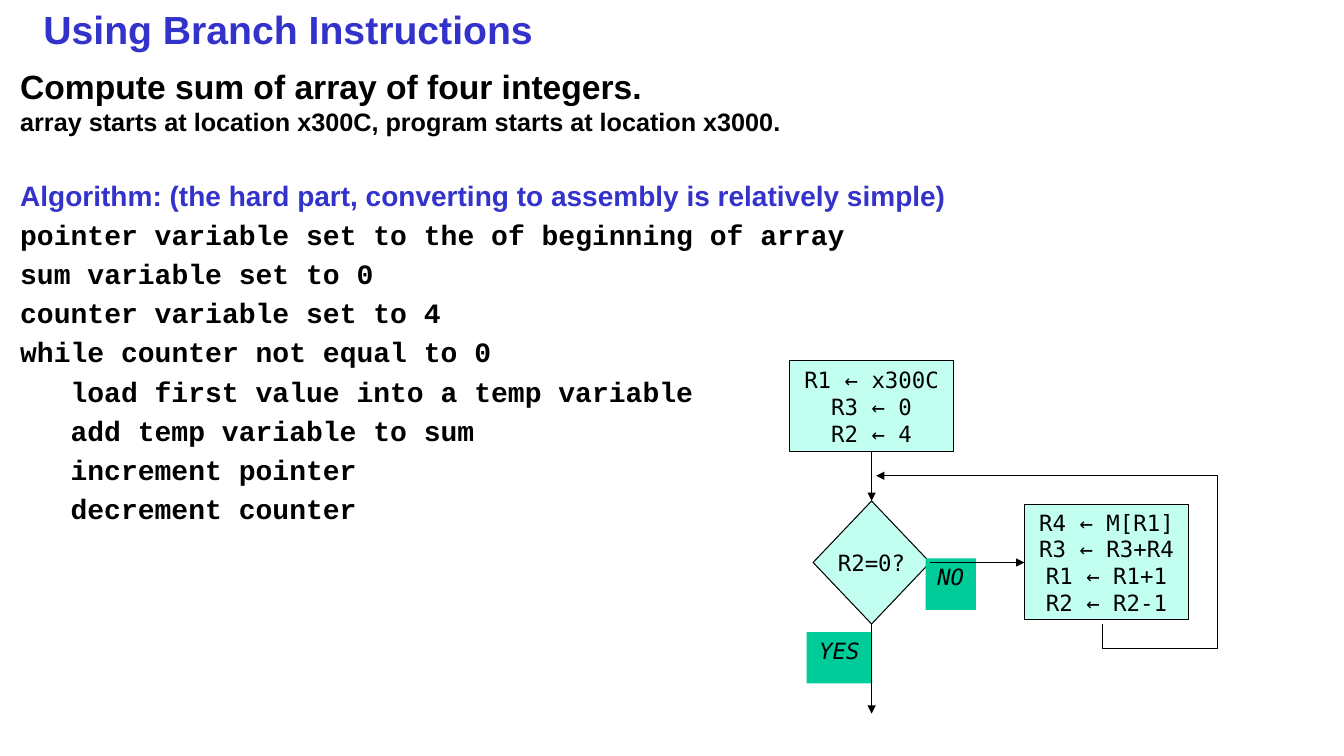
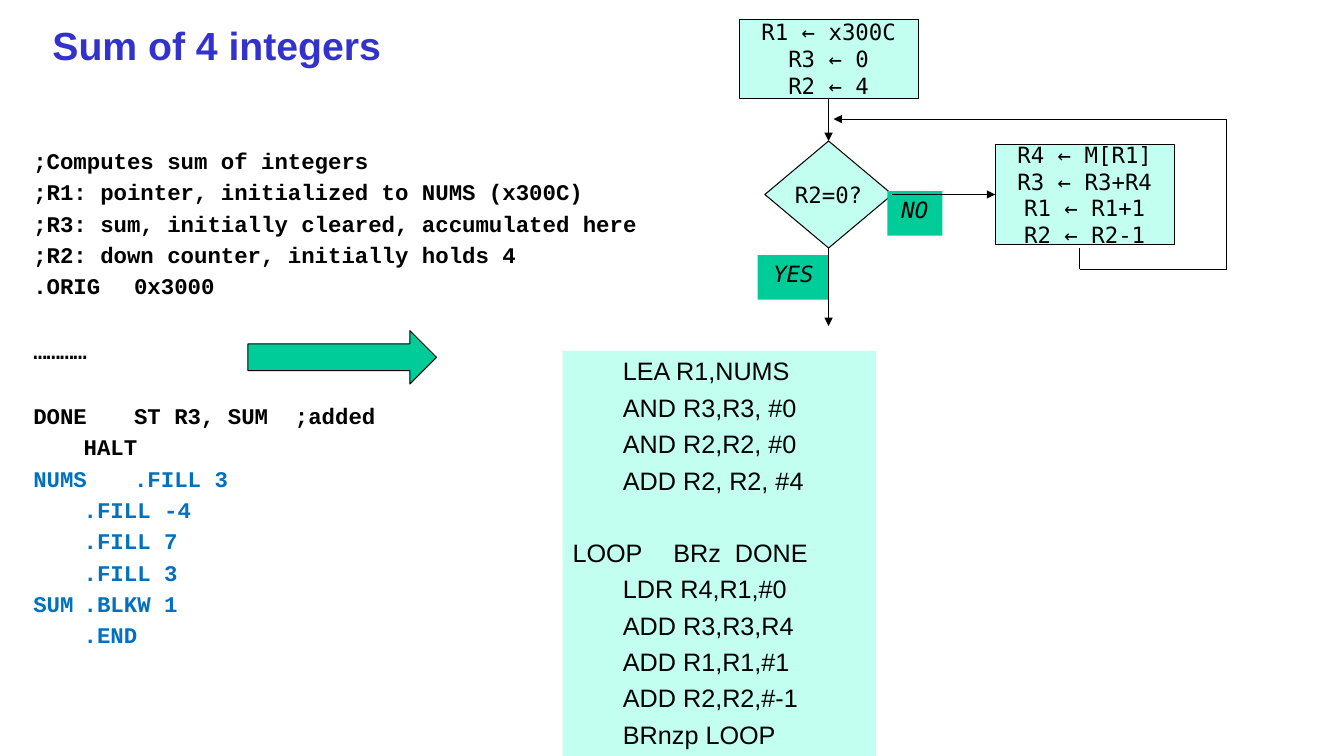
"""Build two slides on summing an array with branch instructions."""
from itertools import pairwise

from lxml import etree
from pptx import Presentation
from pptx import util as u
from pptx.dml.color import RGBColor
from pptx.enum import shapes, text
from pptx.oxml.ns import qn

HUES = {"title": "3333CC", "ink": "000000", "data": "0070C0",
        "mint": "C2FFF0", "green": "00CC99"}
SANS, CODE, MONO = "Arial", "Courier New", "DejaVu Sans Mono"
KINDS = shapes.MSO_SHAPE
UNIT = 0.1


def write(frame, lines, size, face, hue="ink", bold=False, gap=None):
    """Fill a frame with one left-aligned, unbulleted paragraph per line."""
    frame.auto_size = text.MSO_AUTO_SIZE.NONE
    for i, line in enumerate(lines):
        para = frame.paragraphs[0] if i == 0 else frame.add_paragraph()
        para.text = line
        para.alignment = text.PP_ALIGN.LEFT
        font = para.font
        font.size, font.name, font.bold = u.Pt(size), face, bold
        font.color.rgb = RGBColor.from_string(HUES[hue])
        if gap is not None:
            para.space_before = u.Pt(gap)
        props = para._p.get_or_add_pPr()
        props.set("marL", "0")
        props.set("indent", "0")
        if props.find(qn("a:buNone")) is None:
            props.insert_element_before(etree.SubElement(props, qn("a:buNone")), "a:tabLst", "a:defRPr")
    return frame.paragraphs


def draw(slide, kind, box, hue, edge=True):
    """Add a flat filled shape, with a thin black edge if asked for."""
    shape = slide.shapes.add_shape(kind, *map(u.Inches, box))
    shape.shadow.inherit = False
    shape.fill.solid()
    shape.fill.fore_color.rgb = RGBColor.from_string(HUES[hue])
    if edge:
        shape.line.color.rgb = RGBColor.from_string(HUES["ink"])
        shape.line.width = u.Pt(0.75)
    else:
        shape.line.fill.background()
    return shape


deck = Presentation()
deck.slide_width, deck.slide_height = u.Inches(13.33), u.Inches(7.5)

PAGES = [
    ("Using Branch Instructions", (3.3, 0, 126.7, 5.8), (1, 6, 96.3, 54.2), 20, [
        "",
        "Algorithm: (the hard part, converting to assembly is relatively simple)",
        "pointer variable set to the of beginning of array",
        "sum variable set to 0",
        "counter variable set to 4",
        "while counter not equal to 0",
        "load first value into a temp variable",
        "add temp variable to sum",
        "increment pointer",
        "decrement counter"]),
    ("Sum of 4 integers", (4.2, 1.7, 40.8, 5.5), (2.3, 14.1, 74.3, 51), 16, [
        ";Computes sum of integers",
        ";R1: pointer, initialized to NUMS (x300C)",
        ";R3: sum, initially cleared, accumulated here",
        ";R2: down counter, initially holds 4",
        ".ORIG\t0x3000",
        "…………",
        "DONE\tST R3, SUM  ;added",
        "\tHALT",
        "NUMS\t.FILL 3",
        "\t.FILL -4",
        "\t.FILL 7",
        "\t.FILL 3",
        "SUM\t.BLKW 1",
        "\t.END"]),
]
slides, texts = [], []
for name, head, area, size, lines in PAGES:
    slide = deck.slides.add_slide(deck.slide_layouts[1])
    title, body = slide.placeholders
    for item, box in ((title, head), (body, area)):
        item.left, item.top, item.width, item.height = (u.Inches(n * UNIT) for n in box)
    title.text_frame.vertical_anchor = text.MSO_ANCHOR.MIDDLE
    write(title.text_frame, [name], 28, SANS, "title", True)
    slides.append(slide)
    texts.append(write(body.text_frame, lines, size, CODE, bold=True))

plan, code = texts
lead = plan[0]
lead.font.name = SANS
for i, (line, size) in enumerate([
        ("Compute sum of array of four integers.", 24),
        ("array starts at location x300C, program starts at location x3000.", 18)]):
    if i:
        lead.add_line_break()
    run = lead.add_run()
    run.text = line
    run.font.size = u.Pt(size)
plan[1].font.name = SANS
plan[1].font.color.rgb = RGBColor.from_string(HUES["title"])
plan[1].space_before = u.Pt(30)
for para in plan[6:]:
    para._p.pPr.set("marL", str(u.Inches(0.5)))
for para in code[5:7]:
    para.space_before = u.Pt(27)
for para in code[8:]:
    para.font.color.rgb = RGBColor.from_string(HUES["data"])

panel = draw(slides[1], KINDS.RECTANGLE, (5.58, 3.48, 3.11, 4.02), "mint", False)
panel.text_frame.word_wrap = True
panel.text_frame.vertical_anchor = text.MSO_ANCHOR.TOP
steps = write(panel.text_frame, [
    "\tLEA R1,NUMS",
    "\tAND R3,R3, #0",
    "\tAND R2,R2, #0",
    "\tADD R2, R2, #4",
    "LOOP\tBRz  DONE",
    "\tLDR R4,R1,#0",
    "\tADD R3,R3,R4",
    "\tADD R1,R1,#1",
    "\tADD R2,R2,#-1",
    "\tBRnzp LOOP"], 18, SANS, gap=4.4)
steps[4].space_before = u.Pt(30)
draw(slides[1], KINDS.RIGHT_ARROW, (2.46, 3.28, 1.87, 0.53), "green")

NODES = [
    ("start", KINDS.RECTANGLE, (0, 0, 16.3, 9), "R1 ← x300C\vR3 ← 0\vR2 ← 4"),
    ("test", KINDS.DIAMOND, (2.35, 13.9, 11.6, 12.2), "R2=0?"),
    ("work", KINDS.RECTANGLE, (23.3, 14.3, 16.3, 11.4),
     "R4 ← M[R1]\vR3 ← R3+R4\vR1 ← R1+1\vR2 ← R2-1"),
    ("no", KINDS.RECTANGLE, (13.5, 19.6, 5, 5.1), "NO"),
    ("yes", KINDS.RECTANGLE, (1.7, 26.9, 6.5, 5.1), "YES"),
]
FLOWS = [(slides[0], 7.83, 3.58, 0.1, 0.1, 42.5),
         (slides[1], 7.33, 0.19, 0.109, 0.087, 44.4)]
for slide, left, top, col, row, edge in FLOWS:
    nodes = {}
    for key, kind, (x, y, wide, tall), words in NODES:
        label = key in ("no", "yes")
        box = left + x * col, top + y * row, wide * col, tall * row
        node = nodes[key] = draw(slide, kind, box, "green" if label else "mint", not label)
        frame = node.text_frame
        frame.word_wrap = False
        frame.vertical_anchor = text.MSO_ANCHOR.TOP if label else text.MSO_ANCHOR.MIDDLE
        para = write(frame, [words], 16, MONO)[0]
        para.alignment = text.PP_ALIGN.CENTER
        para.font.italic = label

    loop = [(31, 26.1), (31, 28.5), (edge, 28.5), (edge, 11.4), (8.6, 11.4)]
    links = [((8.15, 9), (8.15, 13.9), True, ("start", 2), ("test", 0)),
             ((13.95, 20), (23.3, 20), True, ("test", 3), ("work", 1)),
             ((8.15, 26.1), (8.15, 35), True, ("test", 2), None)]
    links += [(a, b, b == loop[-1], None, None) for a, b in pairwise(loop)]
    for (x, y), (far, low), arrow, tail, tip in links:
        line = slide.shapes.add_connector(
            shapes.MSO_CONNECTOR.STRAIGHT,
            u.Inches(left + x * col), u.Inches(top + y * row),
            u.Inches(left + far * col), u.Inches(top + low * row))
        if tail:
            line.begin_connect(nodes[tail[0]], tail[1])
        if tip:
            line.end_connect(nodes[tip[0]], tip[1])
        line.line.color.rgb = RGBColor.from_string(HUES["ink"])
        line.line.width = u.Pt(0.75)
        if arrow:
            etree.SubElement(line.line._get_or_add_ln(), qn("a:tailEnd"), type="triangle")
        etree.SubElement(line._element.spPr, qn("a:effectLst"))

deck.save("out.pptx")
